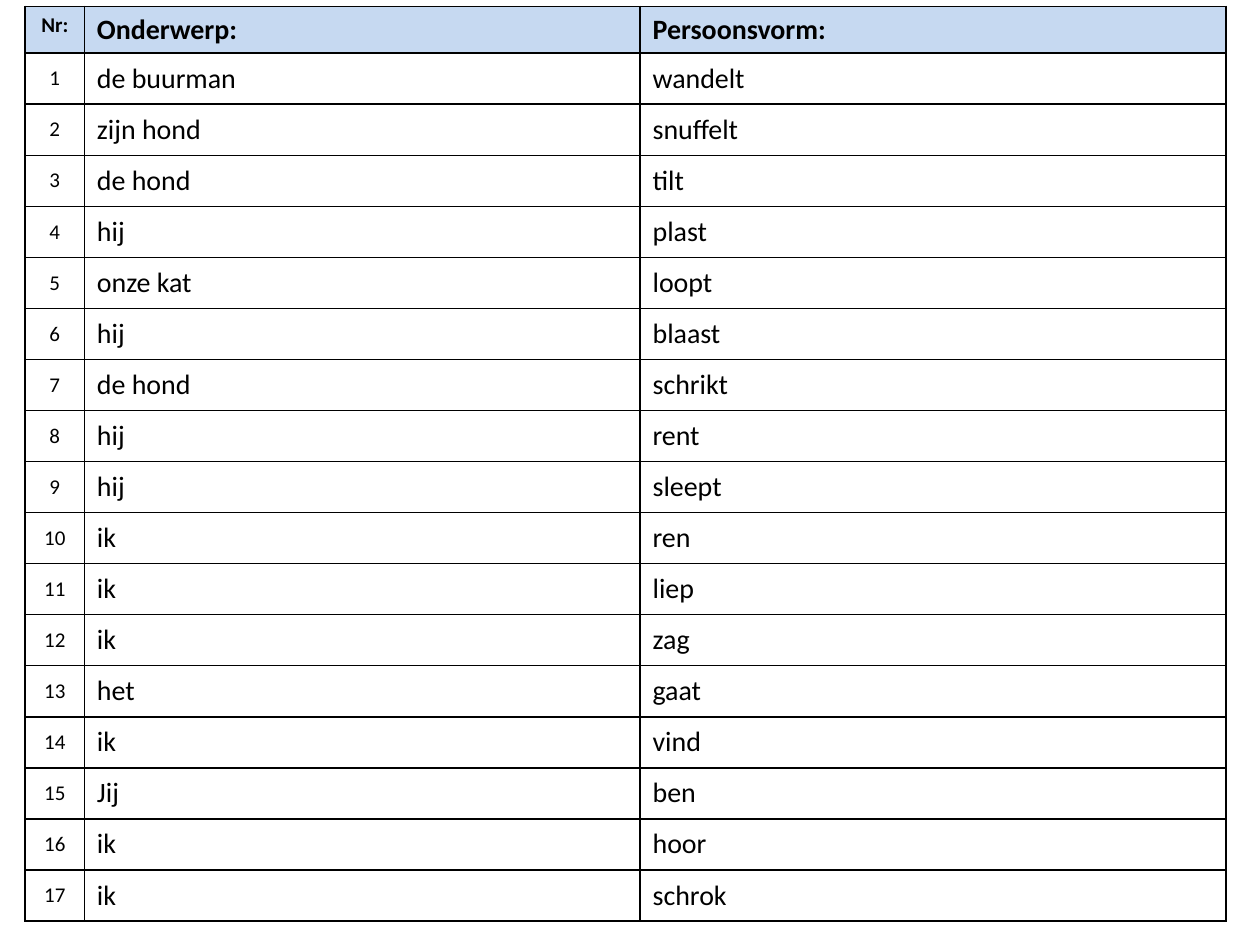
from dataclasses import dataclass

from lxml import etree
from pptx import Presentation
from pptx.dml.color import RGBColor
from pptx.enum.text import MSO_ANCHOR, PP_ALIGN
from pptx.oxml.ns import qn
from pptx.table import Table, _Cell
from pptx.util import Inches, Pt

CENTER, LEFT = PP_ALIGN.CENTER, PP_ALIGN.LEFT
TOP, MIDDLE = MSO_ANCHOR.TOP, MSO_ANCHOR.MIDDLE


@dataclass(frozen=True)
class Theme:
    font: str = "Calibri"
    ink: str = "000000"
    header_fill: str = "C6D9F1"
    number_size: int = 12
    word_size: int = 16
    border: int = 1


@dataclass(frozen=True)
class Column:
    title: str
    width: float
    size: int
    align: PP_ALIGN


@dataclass(frozen=True)
class Answer:
    subject: str
    verb: str


THEME = Theme()
PAGE_WIDTH, PAGE_HEIGHT = 10, 7.5
TABLE_LEFT, TABLE_TOP, TABLE_HEIGHT = 0.2, 0.05, 7.26
HEADER_HEIGHT = 0.37

COLUMNS = [
    Column("Nr:", 0.47, THEME.number_size, CENTER),
    Column("Onderwerp:", 4.41, THEME.word_size, LEFT),
    Column("Persoonsvorm:", 4.65, THEME.word_size, LEFT),
]

ANSWERS = [
    Answer("de buurman", "wandelt"),
    Answer("zijn hond", "snuffelt"),
    Answer("de hond", "tilt"),
    Answer("hij", "plast"),
    Answer("onze kat", "loopt"),
    Answer("hij", "blaast"),
    Answer("de hond", "schrikt"),
    Answer("hij", "rent"),
    Answer("hij", "sleept"),
    Answer("ik", "ren"),
    Answer("ik", "liep"),
    Answer("ik", "zag"),
    Answer("het", "gaat"),
    Answer("ik", "vind"),
    Answer("Jij", "ben"),
    Answer("ik", "hoor"),
    Answer("ik", "schrok"),
]


def add_borders(cell: _Cell) -> None:
    """Draw all four edges; they must precede the fill in the cell XML."""
    properties = cell._tc.get_or_add_tcPr()
    for position, edge in enumerate(("a:lnL", "a:lnR", "a:lnT", "a:lnB")):
        line = etree.Element(qn(edge), w=str(Pt(THEME.border)))
        fill = etree.SubElement(line, qn("a:solidFill"))
        etree.SubElement(fill, qn("a:srgbClr"), val=THEME.ink)
        properties.insert(position, line)


def fill_cell(cell: _Cell, text: str, column: Column, is_header: bool) -> None:
    cell.text_frame.text = text
    cell.vertical_anchor = TOP if is_header else MIDDLE
    para = cell.text_frame.paragraphs[0]
    para.alignment = column.align
    font = para.runs[0].font
    font.name = THEME.font
    font.size = Pt(column.size)
    font.bold = is_header
    font.color.rgb = RGBColor.from_string(THEME.ink)
    if is_header:
        cell.fill.solid()
        cell.fill.fore_color.rgb = RGBColor.from_string(THEME.header_fill)
    else:
        cell.fill.background()
    add_borders(cell)


def size_grid(table: Table) -> None:
    for grid_column, column in zip(table.columns, COLUMNS):
        grid_column.width = Inches(column.width)
    body_height = (TABLE_HEIGHT - HEADER_HEIGHT) / len(ANSWERS)
    for index, row in enumerate(table.rows):
        row.height = Inches(body_height if index else HEADER_HEIGHT)


def main() -> None:
    deck = Presentation()
    deck.slide_width, deck.slide_height = Inches(PAGE_WIDTH), Inches(PAGE_HEIGHT)
    page = deck.slides.add_slide(deck.slide_layouts[6])

    rows = [[column.title for column in COLUMNS]]
    rows += [[str(number), answer.subject, answer.verb]
             for number, answer in enumerate(ANSWERS, start=1)]
    table_width = sum(column.width for column in COLUMNS)
    table = page.shapes.add_table(
        len(rows), len(COLUMNS), Inches(TABLE_LEFT), Inches(TABLE_TOP),
        Inches(table_width), Inches(TABLE_HEIGHT)).table
    table.horz_banding = False
    size_grid(table)
    for row_index, texts in enumerate(rows):
        for column_index, (text, column) in enumerate(zip(texts, COLUMNS)):
            fill_cell(table.cell(row_index, column_index), text, column, row_index == 0)

    deck.save("out.pptx")


if __name__ == "__main__":
    main()
